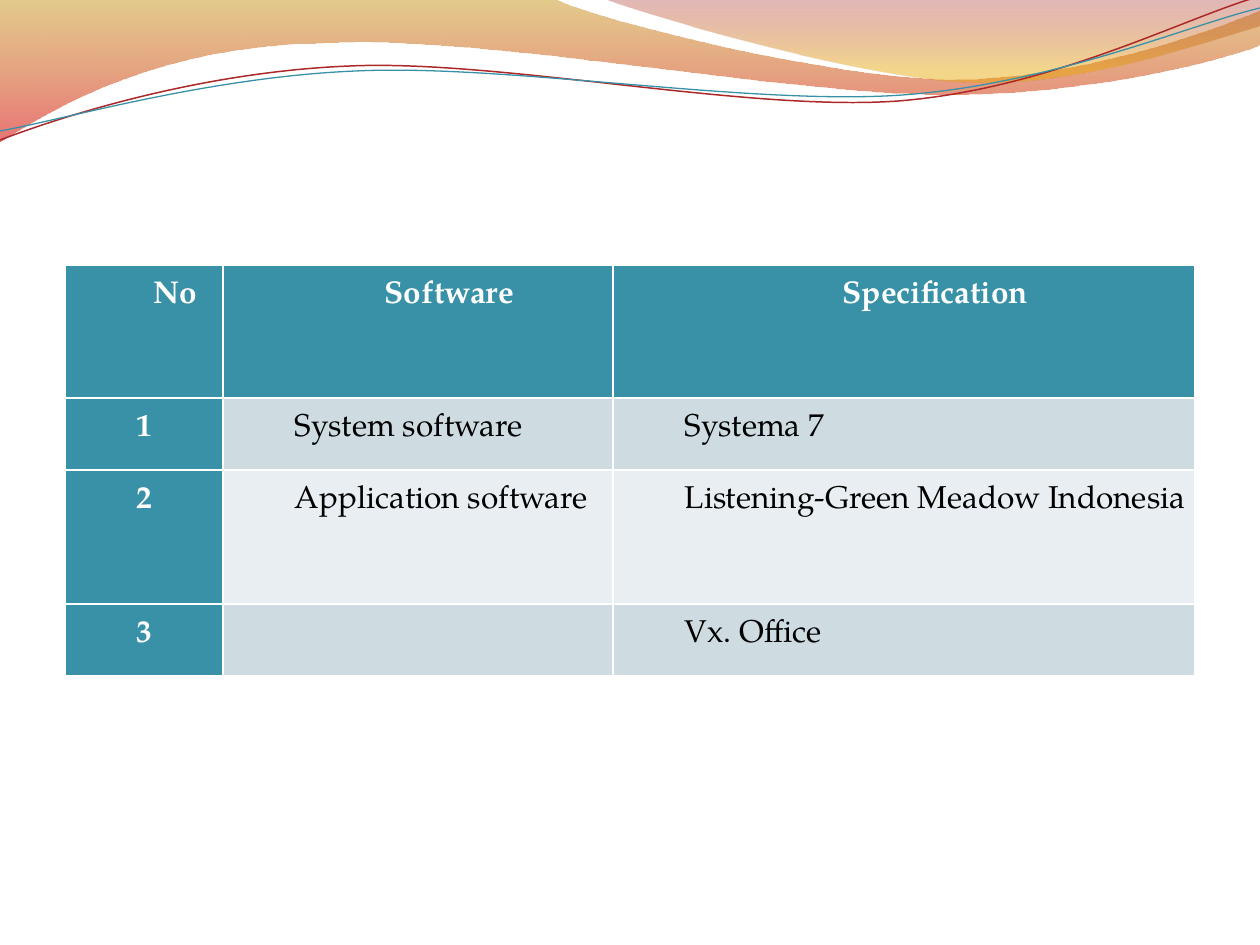
from dataclasses import dataclass

from lxml.etree import SubElement
from pptx import Presentation
from pptx.dml.color import RGBColor as RGB
from pptx.enum.text import PP_ALIGN as Align
from pptx.oxml.ns import qn
from pptx.util import Pt

EMU_PER_PX = 914400 / 126


@dataclass(frozen=True)
class Theme:
    font: str = "TeX Gyre Pagella"
    size: int = 18
    accent: str = "3891A7"
    red: str = "AC2829"
    light: str = "FFFFFF"
    dark: str = "000000"
    bands: tuple = ("CEDCE1", "E8EEF1")
    # Gradient stops: position, colour, opacity in percent
    left_wave: tuple = ((0, "C38B00", 45), (1, "D60305", 55))
    right_wave: tuple = ((0, "A11112", 30), (0.8, "E9A600", 45))


THEME = Theme()

# Each outline is a start point, then segments: 2 numbers for a line, 6 for a curve
LEFT_WAVE = [(0, 0), (554, -1), (600, 21, 837, 79, 955, 79),
             (1075, 79, 1207, 33, 1260, 11), (1261, 45),
             (1239, 55, 1096, 96, 940, 94), (784, 94, 481, 35, 324, 43),
             (163, 45, 58, 105, -1, 142), (0, 0)]
RIGHT_WAVE = [(604, -1), (641, 14, 859, 78, 969, 82),
              (1079, 87, 1211, 40, 1260, 26), (1260, 0), (604, -1)]
RED_LINE = [(0, 140), (60, 117, 199, 72, 349, 66),
            (498, 59, 747, 112, 898, 101), (1050, 89, 1182, 19, 1257, -3)]
TEAL_LINE = [(0, 131), (59, 121, 207, 77, 357, 71),
             (508, 64, 752, 106, 903, 95), (1053, 84, 1186, 26, 1260, 8)]

COLS = [158, 390, 582]
ROWS = [133, 72, 134, 72]
CELLS = [["No", "Software", "Specification"],
         ["1", "System software", "Systema 7"],
         ["2", "Application software", "Listening-Green Meadow Indonesia"],
         ["3", "", "Vx. Office"]]


def px(n):
    return round(n * EMU_PER_PX)


def assign(obj, values):
    for name, value in values.items():
        setattr(obj, name, value)


def add_outline(slide, box, outline, close):
    """Build a freeform, then merge each curve's three points into one Bézier."""
    left, top = box[:2]
    points = [(px(left + seg[i]), px(top + seg[i + 1]))
              for seg in outline for i in range(0, len(seg), 2)]
    fb = slide.shapes.build_freeform(*points[0], scale=1.0)
    fb.add_line_segments(points[1:], close=close)
    sp = fb.convert_to_shape()
    sp.shadow.inherit = False

    lines = iter(list(sp._element.iter(qn("a:lnTo"))))
    for seg in outline[1:]:
        if len(seg) == 2:
            next(lines)
            continue
        trio = [next(lines) for _ in range(3)]
        curve = SubElement(trio[0].getparent(), qn("a:cubicBezTo"))
        trio[0].addprevious(curve)
        for ln in trio:
            curve.append(ln[0])
            ln.getparent().remove(ln)
    return sp


def add_header(slide, box):
    # Translucent waves
    for outline, stops in ((LEFT_WAVE, THEME.left_wave), (RIGHT_WAVE, THEME.right_wave)):
        sp = add_outline(slide, box, outline, True)
        sp.line.fill.background()
        sp.fill.gradient()
        sp.fill.gradient_angle = 270
        for stop, (pos, color, _) in zip(sp.fill.gradient_stops, stops):
            stop.position = pos
            stop.color.rgb = RGB.from_string(color)
        for clr, (_, _, opacity) in zip(sp._element.spPr.iter(qn("a:srgbClr")), stops):
            SubElement(clr, qn("a:alpha"), val=str(opacity * 1000))

    # Thin crossing lines
    for outline, color, width in ((RED_LINE, THEME.red, 0.85), (TEAL_LINE, THEME.accent, 0.75)):
        sp = add_outline(slide, box, outline, False)
        sp.fill.background()
        sp.line.color.rgb = RGB.from_string(color)
        sp.line.width = Pt(width)


def fill_cell(cell, text, row, col):
    strong = row == 0 or col == 0
    cell.fill.solid()
    cell.fill.fore_color.rgb = RGB.from_string(
        THEME.accent if strong else THEME.bands[(row - 1) % 2])
    assign(cell, dict(margin_left=px(9), margin_right=px(9), margin_top=0, margin_bottom=0))
    if not text:
        return
    p = cell.text_frame.paragraphs[0]
    assign(p, dict(alignment=Align.JUSTIFY if row else Align.CENTER, line_spacing=1.5))
    p._p.get_or_add_pPr().set("marL", str(px(63)))
    r = p.add_run()
    r.text = text
    assign(r.font, dict(name=THEME.font, size=Pt(THEME.size), bold=strong))
    r.font.color.rgb = RGB.from_string(THEME.light if strong else THEME.dark)


def add_software_table(slide, box):
    # The table style supplies the white rules
    table = slide.shapes.add_table(len(ROWS), len(COLS), *map(px, box)).table
    table.first_col = True
    for column, width in zip(table.columns, COLS):
        column.width = px(width)
    for i, height in enumerate(ROWS):
        table.rows[i].height = px(height)
        for j, text in enumerate(CELLS[i]):
            fill_cell(table.cell(i, j), text, i, j)


def main():
    prs = Presentation()
    assign(prs, dict(slide_width=px(1260), slide_height=px(945)))
    slide = prs.slides.add_slide(prs.slide_layouts[6])
    add_header(slide, (0, 0, 1260, 142))
    add_software_table(slide, (65, 265, sum(COLS), sum(ROWS)))
    prs.save("out.pptx")


if __name__ == "__main__":
    main()
